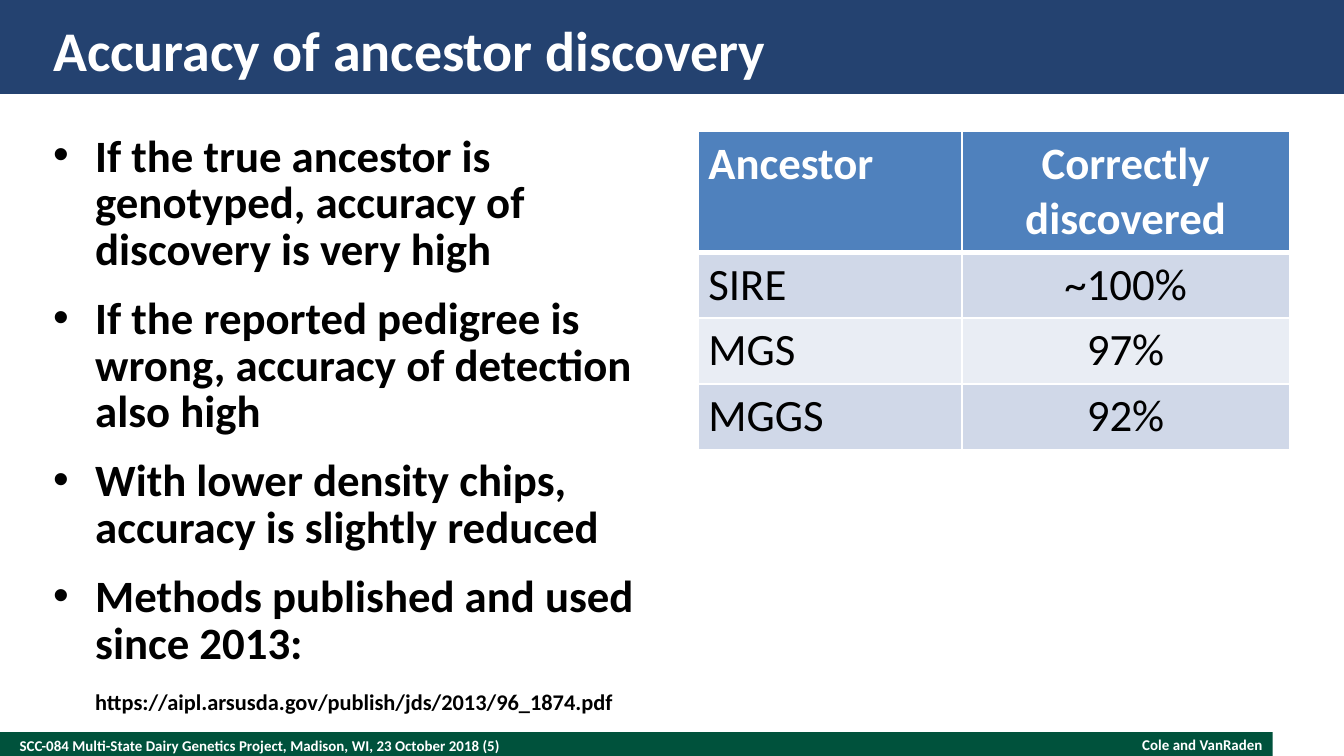
from dataclasses import dataclass
from typing import NamedTuple

from lxml.etree import SubElement
from pptx import Presentation
from pptx.dml.color import RGBColor
from pptx.enum.shapes import MSO_SHAPE as Preset
from pptx.enum.text import MSO_ANCHOR as Anchor, MSO_AUTO_SIZE as AutoSize, PP_ALIGN as Align
from pptx.oxml.ns import qn
from pptx.util import Pt

PX = 9525  # EMU per px, 96 px to the inch


@dataclass(frozen=True)
class Theme:
    font: str = "Calibri"
    white: str = "FFFFFF"
    black: str = "000000"
    navy: str = "244270"
    green: str = "00523C"
    header: str = "4F81BD"
    bands: tuple[str, str] = ("D0D8E8", "E9EDF4")
    title_size: int = 30
    body_size: int = 24
    link_size: int = 12
    footer_size: int = 8


class Box(NamedTuple):
    left: int
    top: int
    width: int
    height: int

    def emu(self) -> list[int]:
        return [length * PX for length in self]


class Bar(NamedTuple):
    box: Box
    color: str


class Footer(NamedTuple):
    box: Box
    text: str
    align: Align


class Bullet(NamedTuple):
    text: str
    link: str = ""


THEME = Theme()
BARS = [
    Bar(Box(0, 523, 909, 19), THEME.green),
    Bar(Box(0, 0, 960, 67), THEME.navy),
]
FOOTERS = [
    Footer(Box(14, 523, 624, 19),
           "SCC-084 Multi-State Dairy Genetics Project, Madison, WI, 23 October 2018 (5)", Align.LEFT),
    Footer(Box(691, 525, 211, 13), "Cole and VanRaden", Align.RIGHT),
]
BULLETS = [
    Bullet("If the true ancestor is genotyped, accuracy of discovery is very high"),
    Bullet("If the reported pedigree is wrong, accuracy of detection also high"),
    Bullet("With lower density chips, accuracy is slightly reduced"),
    Bullet("Methods published and used since 2013: ",
           "https://aipl.arsusda.gov/publish/jds/2013/96_1874.pdf"),
]
ACCURACY = [
    ("Ancestor", "Correctly discovered"),
    ("SIRE", "~100%"),
    ("MGS", "97%"),
    ("MGGS", "92%"),
]
COLUMN_WIDTHS = (188, 234)
HEADER_HEIGHT, ROW_HEIGHT = 84, 45


def style_font(font, size: int, color: str, bold: bool = True) -> None:
    font.name = THEME.font
    font.size = Pt(size)
    font.bold = bold
    font.color.rgb = RGBColor.from_string(color)


def set_frame(frame, anchor: Anchor) -> None:
    frame.word_wrap = True
    frame.auto_size = AutoSize.NONE
    frame.vertical_anchor = anchor
    frame.margin_left = frame.margin_top = frame.margin_right = frame.margin_bottom = 0


def place(shape, box: Box) -> None:
    shape.left, shape.top, shape.width, shape.height = box.emu()


def draw_bar(slide, bar: Bar) -> None:
    shape = slide.shapes.add_shape(Preset.RECTANGLE, *bar.box.emu())
    shape.shadow.inherit = False
    shape.fill.solid()
    shape.fill.fore_color.rgb = RGBColor.from_string(bar.color)
    shape.line.fill.background()


def draw_footer(slide, footer: Footer) -> None:
    frame = slide.shapes.add_textbox(*footer.box.emu()).text_frame
    set_frame(frame, Anchor.MIDDLE)
    line = frame.paragraphs[0]
    line.text = footer.text
    line.alignment = footer.align
    style_font(line.runs[0].font, THEME.footer_size, THEME.white)


def write_bullet(paragraph, bullet: Bullet) -> None:
    properties = paragraph._p.get_or_add_pPr()
    properties.set("marL", str(30 * PX))
    properties.set("indent", str(-30 * PX))
    SubElement(properties, qn("a:buFont"), typeface="Arial")
    SubElement(properties, qn("a:buChar"), char="•")
    paragraph.alignment = Align.LEFT
    paragraph.line_spacing = Pt(25)
    paragraph.space_before = Pt(0)
    paragraph.space_after = Pt(12)
    for text, size in ((bullet.text, THEME.body_size), (bullet.link, THEME.link_size)):
        if text:
            run = paragraph.add_run()
            run.text = text
            style_font(run.font, size, THEME.black)


def set_borders(cell, widths: dict[str, int]) -> None:
    properties = cell._tc.get_or_add_tcPr()
    for position, (side, width) in enumerate(widths.items()):
        line = SubElement(properties, qn(f"a:ln{side}"), w=str(Pt(width)))
        fill = SubElement(line, qn("a:solidFill"))
        SubElement(fill, qn("a:srgbClr"), val=THEME.white)
        properties.insert(position, line)


def draw_accuracy_table(slide, left: int, top: int) -> None:
    heights = [HEADER_HEIGHT] + [ROW_HEIGHT] * (len(ACCURACY) - 1)
    box = Box(left, top, sum(COLUMN_WIDTHS), sum(heights))
    table = slide.shapes.add_table(len(ACCURACY), len(COLUMN_WIDTHS), *box.emu()).table
    for column, width in zip(table.columns, COLUMN_WIDTHS):
        column.width = width * PX
    for r, (values, height) in enumerate(zip(ACCURACY, heights)):
        table.rows[r].height = height * PX
        is_header = r == 0
        for c, value in enumerate(values):
            cell = table.cell(r, c)
            cell.margin_left = cell.margin_right = 7 * PX
            cell.margin_top = cell.margin_bottom = 4 * PX
            cell.fill.solid()
            color = THEME.header if is_header else THEME.bands[(r - 1) % 2]
            cell.fill.fore_color.rgb = RGBColor.from_string(color)
            set_borders(cell, {"L": 1, "R": 1, "T": 3 if r == 1 else 1, "B": 3 if is_header else 1})
            entry = cell.text_frame.paragraphs[0]
            entry.text = value
            entry.alignment = Align.CENTER if c else Align.LEFT
            style_font(entry.runs[0].font, THEME.body_size,
                       THEME.white if is_header else THEME.black, is_header)


def main() -> None:
    deck = Presentation()
    deck.slide_width, deck.slide_height = 960 * PX, 540 * PX
    slide = deck.slides.add_slide(deck.slide_layouts[1])
    title, findings = slide.placeholders

    # Banner and footer, with the placeholders brought in front of them
    for bar in BARS:
        draw_bar(slide, bar)
    for footer in FOOTERS:
        draw_footer(slide, footer)
    for placeholder in (title, findings):
        placeholder.element.getparent().append(placeholder.element)

    # Title
    place(title, Box(38, 10, 883, 50))
    set_frame(title.text_frame, Anchor.MIDDLE)
    heading = title.text_frame.paragraphs[0]
    heading.text = "Accuracy of ancestor discovery"
    heading.alignment = Align.LEFT
    style_font(heading.runs[0].font, THEME.title_size, THEME.white)

    # Findings
    place(findings, Box(38, 96, 422, 403))
    set_frame(findings.text_frame, Anchor.TOP)
    for i, bullet in enumerate(BULLETS):
        frame = findings.text_frame
        write_bullet(frame.add_paragraph() if i else frame.paragraphs[0], bullet)

    # Discovery rates
    draw_accuracy_table(slide, 499, 94)
    deck.save("out.pptx")


if __name__ == "__main__":
    main()
